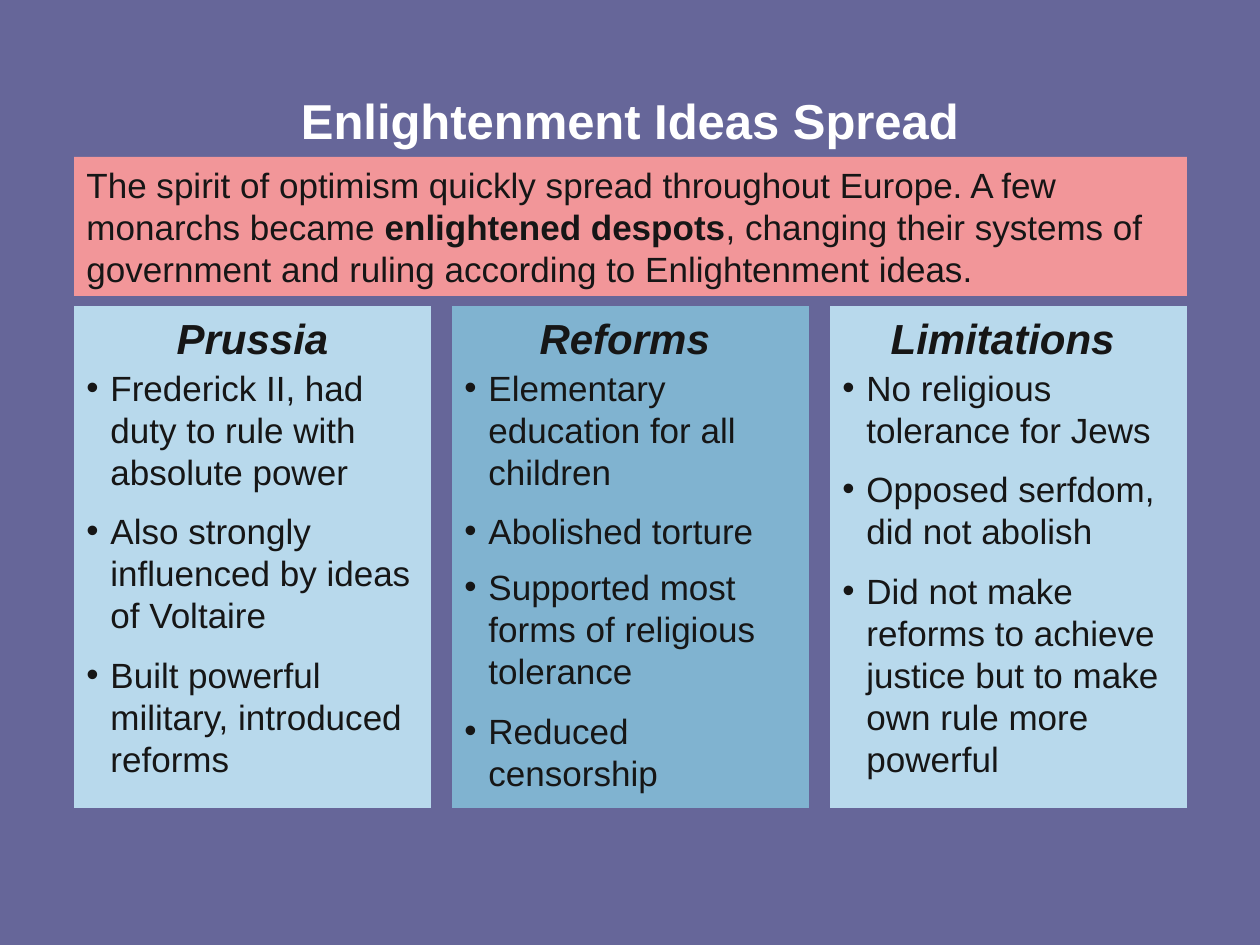
"""Build the slide on Enlightenment ideas and reform in Prussia."""
from lxml.etree import SubElement
from pptx import Presentation
from pptx.dml.color import RGBColor
from pptx.enum.shapes import MSO_SHAPE as Shape
from pptx.enum.text import MSO_ANCHOR as Anchor, MSO_AUTO_SIZE as AutoSize, PP_ALIGN as Align
from pptx.oxml.ns import qn
from pptx.util import Emu, Pt

PX = 914400 / 126
COLORS = {"background": "666699", "intro": "F29699", "light": "B8D9EC",
          "dark": "80B3D0", "ink": "161616", "title": "FFFFFF"}
LEFT, COLUMN_WIDTH, COLUMN_PITCH = 74, 357, 378
HEADING_TOP, HEADING_HEIGHT, BODY_HEIGHT = 306, 54, 448
BULLET_INDENT = 24


def add_box(shapes, left, top, width, height, color):
    shape = shapes.add_shape(Shape.RECTANGLE, *(Emu(round(n * PX)) for n in (left, top, width, height)))
    shape.shadow.inherit = False
    shape.fill.solid()
    shape.fill.fore_color.rgb = RGBColor.from_string(COLORS[color])
    shape.line.fill.background()
    shape.text_frame.word_wrap = True
    shape.text_frame.vertical_anchor = Anchor.TOP
    return shape


def add_run(paragraph, text, color="ink", **values):
    run = paragraph.add_run()
    run.text = text
    run.font.color.rgb = RGBColor.from_string(COLORS[color])
    for name, value in {"name": "Arial", "size": Pt(20), "bold": False, **values}.items():
        setattr(run.font, name, value)


presentation = Presentation()
presentation.slide_width = Emu(round(1260 * PX))
presentation.slide_height = Emu(round(945 * PX))
slide = presentation.slides.add_slide(presentation.slide_layouts[5])
slide.background.fill.solid()
slide.background.fill.fore_color.rgb = RGBColor.from_string(COLORS["background"])

title = slide.shapes.title
for name, value in {"left": 84, "top": 84, "width": 1092, "height": 73}.items():
    setattr(title, name, Emu(round(value * PX)))
for name, value in {"word_wrap": True, "auto_size": AutoSize.NONE, "vertical_anchor": Anchor.TOP}.items():
    setattr(title.text_frame, name, value)
paragraph = title.text_frame.paragraphs[0]
paragraph.alignment = Align.CENTER
add_run(paragraph, "Enlightenment Ideas Spread", "title", size=Pt(28), bold=True)

intro = add_box(slide.shapes, LEFT, 157, 2 * COLUMN_PITCH + COLUMN_WIDTH, 139, "intro")
paragraph = intro.text_frame.paragraphs[0]
paragraph.alignment = Align.LEFT
for text, bold in [
    ("The spirit of optimism quickly spread throughout Europe. A few monarchs became ", False),
    ("enlightened despots", True),
    (", changing their systems of government and ruling according to Enlightenment ideas.", False),
]:
    add_run(paragraph, text, bold=bold)

columns = [
    ("Prussia", "light", [
        ("Frederick II, had duty to rule with absolute power", 10),
        ("Also strongly influenced by ideas of Voltaire", 10),
        ("Built powerful military, introduced reforms", 10)]),
    ("Reforms ", "dark", [
        ("Elementary education for all children", 10),
        ("Abolished torture", 8),
        ("Supported most forms of religious tolerance", 10),
        ("Reduced censorship", 10)]),
    ("Limitations ", "light", [
        ("No religious tolerance for Jews", 10),
        ("Opposed serfdom, did not abolish", 10),
        ("Did not make reforms to achieve justice but to make own rule more powerful", 10)]),
]

for index, (heading, color, points) in enumerate(columns):
    left = LEFT + index * COLUMN_PITCH
    group = slide.shapes.add_group_shape()
    body = add_box(group.shapes, left, HEADING_TOP + HEADING_HEIGHT, COLUMN_WIDTH, BODY_HEIGHT, color)
    frame = body.text_frame
    for number, (text, space_after) in enumerate(points):
        paragraph = frame.add_paragraph() if number else frame.paragraphs[0]
        paragraph.alignment = Align.LEFT
        paragraph.space_after = Pt(space_after)
        add_run(paragraph, text)
        properties = paragraph._p.get_or_add_pPr()
        indent = round(BULLET_INDENT * PX)
        properties.set("marL", str(indent))
        properties.set("indent", str(-indent))
        SubElement(properties, qn("a:buFont")).set("typeface", "Arial")
        SubElement(properties, qn("a:buChar")).set("char", "•")

    header = add_box(group.shapes, left, HEADING_TOP, COLUMN_WIDTH, HEADING_HEIGHT, color)
    paragraph = header.text_frame.paragraphs[0]
    paragraph.alignment = Align.CENTER
    add_run(paragraph, heading, size=Pt(24), bold=True, italic=True)

presentation.save("out.pptx")
